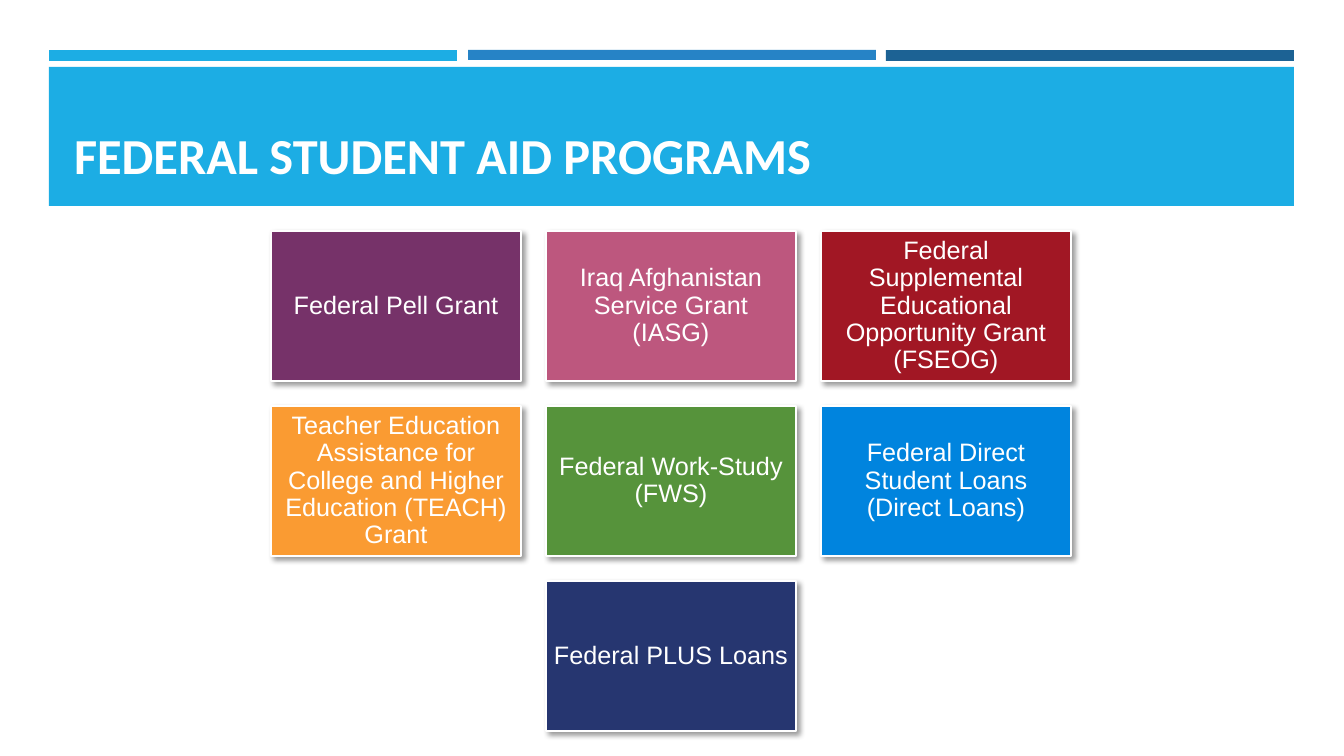
from lxml import etree
from pptx import Presentation
from pptx import util as u
from pptx.dml.color import RGBColor
from pptx.enum import shapes, text
from pptx.oxml import ns

PX = 914400 / 100.8


def px(*lengths):
    return [u.Emu(round(length * PX)) for length in lengths]


def color(hex_string):
    return RGBColor.from_string(hex_string)


presentation = Presentation()
presentation.slide_width, presentation.slide_height = px(1344, 756)
slide = presentation.slides.add_slide(presentation.slide_layouts[5])

bars = [
    (49, 50, 408, 11, "1CADE4"),
    (468, 50, 408, 10, "2683C6"),
    (886, 50, 408, 11, "1C6294"),
    (49, 67, 1245, 139, "1CADE4"),
]
for left, top, width, height, fill in bars:
    bar = slide.shapes.add_shape(shapes.MSO_SHAPE.RECTANGLE, *px(left, top, width, height))
    bar.shadow.inherit = False
    bar.fill.solid()
    bar.fill.fore_color.rgb = color(fill)
    bar.line.fill.background()

title = slide.shapes.title
bar.element.addnext(title.element)
title.left, title.top, title.width, title.height = px(64, 81, 1216, 109)
title.text_frame.text = "FEDERAL STUDENT AID PROGRAMS"
title.text_frame.vertical_anchor = text.MSO_ANCHOR.BOTTOM
paragraph = title.text_frame.paragraphs[0]
paragraph.alignment = text.PP_ALIGN.LEFT
for name, value in {"name": "Calibri", "size": u.Pt(36), "bold": True}.items():
    setattr(paragraph.font, name, value)
paragraph.font.color.rgb = color("FFFFFF")

programs = [
    ("Federal Pell Grant", "763269"),
    ("Iraq Afghanistan Service Grant (IASG)", "BD577E"),
    ("Federal Supplemental Educational Opportunity Grant (FSEOG)", "A11724"),
    ("Teacher Education Assistance for College and Higher Education (TEACH) Grant", "FA9B32"),
    ("Federal Work-Study (FWS)", "56933B"),
    ("Federal Direct Student Loans (Direct Loans)", "0084DE"),
    ("Federal PLUS Loans", "263670"),
]
columns = 3
inset = px(7)[0]
frame_format = {
    "word_wrap": True,
    "vertical_anchor": text.MSO_ANCHOR.MIDDLE,
    "margin_left": inset,
    "margin_top": inset,
    "margin_right": inset,
    "margin_bottom": inset,
}
for index, (program, fill) in enumerate(programs):
    row, column = divmod(index, columns)
    cards_in_row = min(columns, len(programs) - row * columns)
    column += (columns - cards_in_row) // 2
    card = slide.shapes.add_shape(
        shapes.MSO_SHAPE.RECTANGLE, *px(271 + 275 * column, 231 + 175 * row, 250, 150)
    )
    card.fill.solid()
    card.fill.fore_color.rgb = color(fill)
    card.line.color.rgb = color("FFFFFF")
    card.line.width = u.Pt(1.75)

    card.shadow.inherit = False
    effects = card.element.spPr.find(ns.qn("a:effectLst"))
    shadow = etree.SubElement(
        effects, ns.qn("a:outerShdw"),
        blurRad=str(u.Pt(4)), dist=str(u.Pt(3)), dir=str(45 * 60000), algn="tl", rotWithShape="0",
    )
    shade = etree.SubElement(shadow, ns.qn("a:srgbClr"), val="000000")
    etree.SubElement(shade, ns.qn("a:alpha"), val="40000")

    frame = card.text_frame
    for name, value in frame_format.items():
        setattr(frame, name, value)
    frame.text = program
    paragraph = frame.paragraphs[0]
    paragraph.alignment = text.PP_ALIGN.CENTER
    paragraph.line_spacing = 0.9
    for name, value in {"name": "Arial", "size": u.Pt(18)}.items():
        setattr(paragraph.font, name, value)
    paragraph.font.color.rgb = color("FFFFFF")

presentation.save("out.pptx")
